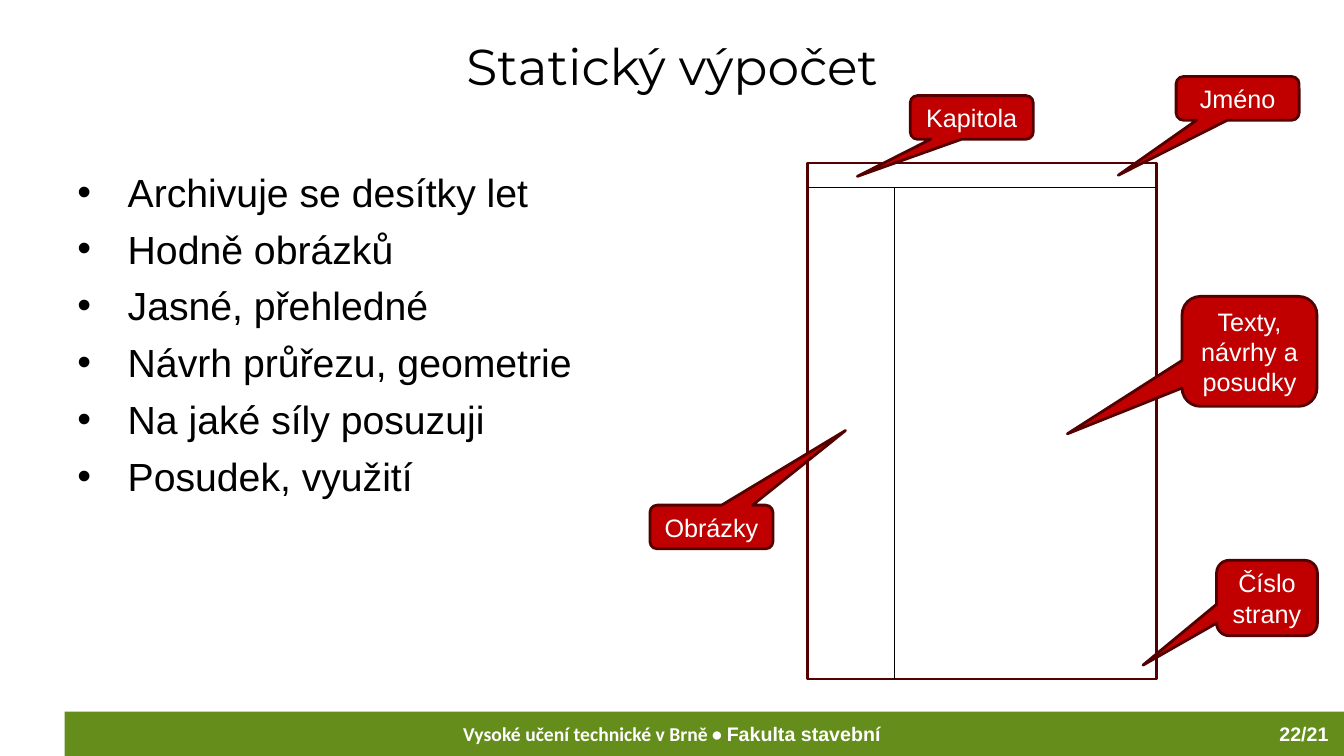
from lxml.etree import SubElement
from pptx import Presentation
from pptx.dml.color import RGBColor
from pptx.enum.shapes import MSO_CONNECTOR, MSO_SHAPE
from pptx.enum.text import MSO_ANCHOR, PP_ALIGN
from pptx.oxml.ns import qn
from pptx.util import Cm, Pt

GREEN = RGBColor(0x65, 0x8D, 0x1B)
RED = RGBColor(0xC0, 0x00, 0x00)
MAROON = RGBColor(0x54, 0x00, 0x00)
BLACK = RGBColor(0, 0, 0)
WHITE = RGBColor(0xFF, 0xFF, 0xFF)

WIDTH, HEIGHT = 33.87, 19.05
PAGE_X, PAGE_Y, PAGE_W, PAGE_H = 20.35, 4.11, 8.79, 13
HEADER_Y, MARGIN_X = 4.72, 22.53
SMALL = (3.1, 1.1)

BULLETS = [
    "Archivuje se desítky let",
    "Hodně obrázků",
    "Jasné, přehledné",
    "Návrh průřezu, geometrie",
    "Na jaké síly posuzuji",
    "Posudek, využití",
]
CALLOUTS = [
    ("Číslo strany", (30.66, 14.12), (2.54, 1.9), (-1.23, 0.89)),
    ("Jméno", (29.64, 1.93), SMALL, (-0.97, 1.76)),
    ("Kapitola", (22.94, 2.41), SMALL, (-0.93, 1.35)),
    ("Obrázky", (16.38, 12.73), SMALL, (1.09, -2.21)),
    ("Texty, návrhy a posudky", (29.79, 7.47), (3.4, 2.77), (-1.35, 0.75)),
]


class Deck:
    title = {"name": "Montserrat", "size": Pt(36)}
    body = {"name": "Arial", "size": Pt(28)}
    label = {"name": "Arial", "size": Pt(18)}
    footer = {"name": "Arial", "size": Pt(14), "bold": True}

    def __init__(self):
        self.prs = Presentation()
        self.prs.slide_width, self.prs.slide_height = Cm(WIDTH), Cm(HEIGHT)
        self.slide = self.prs.slides.add_slide(self.prs.slide_layouts[6])

    def run(self, p, text, style, color):
        r = p.add_run()
        r.text = text
        for key, value in style.items():
            setattr(r.font, key, value)
        r.font.color.rgb = color

    def text(self, box, runs, align, color):
        sp = self.slide.shapes.add_textbox(*map(Cm, box))
        tf = sp.text_frame
        tf.word_wrap = True
        p = tf.paragraphs[0]
        p.alignment = align
        for text, style in runs:
            self.run(p, text, style, color)

    def bullets(self, box, items):
        tf = self.slide.shapes.add_textbox(*map(Cm, box)).text_frame
        tf.word_wrap = True
        for i, item in enumerate(items):
            p = tf.add_paragraph() if i else tf.paragraphs[0]
            if i:
                p.space_before = Pt(7)
            pPr = p._p.get_or_add_pPr()
            pPr.set("marL", str(Cm(1.27)))
            pPr.set("indent", str(-Cm(1.27)))
            SubElement(pPr, qn("a:buFont"), typeface="Arial")
            SubElement(pPr, qn("a:buChar"), char="•")
            self.run(p, item, self.body, BLACK)

    def shape(self, kind, box, fill=None, line=None):
        sp = self.slide.shapes.add_shape(kind, *map(Cm, box))
        sp.shadow.inherit = False
        if fill is None:
            sp.fill.background()
        else:
            sp.fill.solid()
            sp.fill.fore_color.rgb = fill
        if line is None:
            sp.line.fill.background()
        else:
            sp.line.color.rgb = line
            sp.line.width = Pt(2)
        return sp

    def callout(self, text, pos, size, tip):
        sp = self.shape(MSO_SHAPE.ROUNDED_RECTANGULAR_CALLOUT, pos + size, RED, MAROON)
        sp.adjustments[0], sp.adjustments[1] = tip
        tf = sp.text_frame
        tf.word_wrap = True
        tf.vertical_anchor = MSO_ANCHOR.MIDDLE
        p = tf.paragraphs[0]
        p.alignment = PP_ALIGN.CENTER
        self.run(p, text, self.label, WHITE)

    def line(self, *ends):
        cxn = self.slide.shapes.add_connector(MSO_CONNECTOR.STRAIGHT, *map(Cm, ends))
        cxn.line.color.rgb = BLACK
        cxn.line.width = Pt(0.75)
        SubElement(cxn._element.spPr, qn("a:effectLst"))


def main():
    deck = Deck()
    deck.shape(MSO_SHAPE.RECTANGLE, (1.63, 17.93, WIDTH - 1.63, 1.12), GREEN)
    university = ("Vysoké učení technické v Brně • ", {**deck.footer, "name": "Calibri"})
    faculty = ("Fakulta stavební", deck.footer)
    deck.text((0, 18.06, WIDTH, 0.86), [university, faculty], PP_ALIGN.CENTER, WHITE)
    deck.text((30.4, 18.06, 3.33, 0.86), [("22/21", deck.footer)], PP_ALIGN.RIGHT, WHITE)
    deck.text((1.7, 0.76, 30.48, 2.77), [("Statický výpočet", deck.title)], PP_ALIGN.CENTER, BLACK)
    deck.bullets((1.7, 4.11, 17.04, 12.9), BULLETS)
    deck.shape(MSO_SHAPE.RECTANGLE, (PAGE_X, PAGE_Y, PAGE_W, PAGE_H), line=MAROON)
    deck.line(MARGIN_X, HEADER_Y, MARGIN_X, PAGE_Y + PAGE_H)
    deck.line(PAGE_X, HEADER_Y, PAGE_X + PAGE_W, HEADER_Y)
    for callout in CALLOUTS:
        deck.callout(*callout)
    deck.prs.save("out.pptx")


if __name__ == "__main__":
    main()
